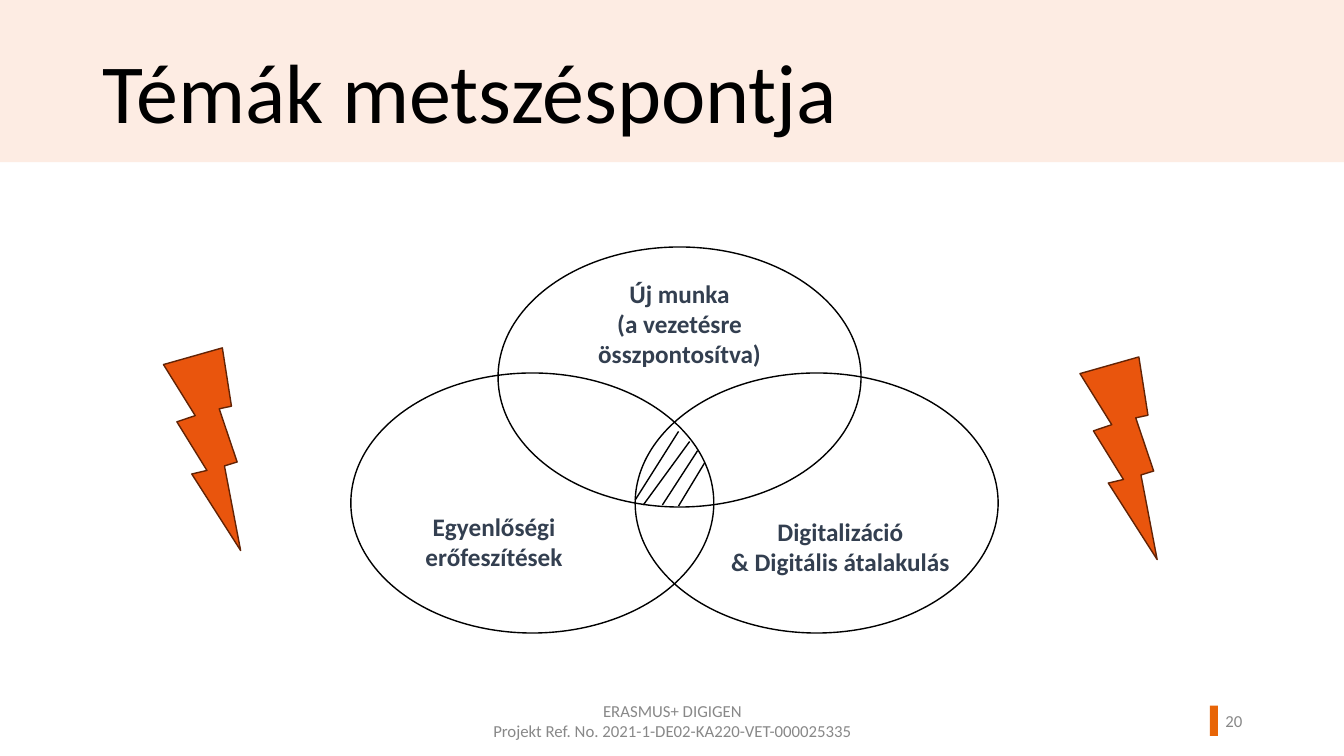
import pptx
import pptx.util
import pptx.dml.color
import pptx.enum.shapes
import pptx.enum.text
import pptx.oxml.ns
import lxml.etree

Inches = pptx.util.Inches
Pt = pptx.util.Pt
Shape = pptx.enum.shapes.MSO_SHAPE
Align = pptx.enum.text.PP_ALIGN
Anchor = pptx.enum.text.MSO_ANCHOR
COLORS = {name: pptx.dml.color.RGBColor.from_string(value) for name, value in {
    "band": "FDECE3", "accent": "E86507", "bolt": "E9550D", "bolt_edge": "622305",
    "black": "000000", "label": "333F50", "footer": "888888",
}.items()}

deck = pptx.Presentation()
deck.slide_width = Inches(13.33)
deck.slide_height = Inches(7.5)
page = deck.slides.add_slide(deck.slide_layouts[5])


def add_figure(kind, left, top, width, height, fill=None, line=None):
    shape = page.shapes.add_shape(kind, Inches(left), Inches(top), Inches(width), Inches(height))
    shape.shadow.inherit = False
    if fill:
        shape.fill.solid()
        shape.fill.fore_color.rgb = COLORS[fill]
    else:
        shape.fill.background()
    if line:
        shape.line.color.rgb = COLORS[line]
        shape.line.width = Pt(1)
    else:
        shape.line.fill.background()
    return shape


def write_text(box, text, size, color, align, anchor=Anchor.TOP, bold=False):
    frame = box.text_frame
    frame.word_wrap = True
    frame.auto_size = pptx.enum.text.MSO_AUTO_SIZE.NONE
    frame.vertical_anchor = anchor
    frame.text = text
    for para in frame.paragraphs:
        para.alignment = align
        for span in para.runs:
            span.font.name = "Calibri"
            span.font.size = Pt(size)
            span.font.bold = bold
            span.font.color.rgb = COLORS[color]


band = add_figure(Shape.RECTANGLE, 0, 0, 13.33, 1.61, fill="band")
page.shapes.element.insert(2, band.element)
add_figure(Shape.RECTANGLE, 12, 7, 0.08, 0.3, fill="accent")

title = page.shapes.title
title.left, title.top = Inches(0.92), Inches(0.46)
title.width, title.height = Inches(9.93), Inches(0.85)
write_text(title, "Témák metszéspontja", 60, "black", Align.LEFT)
title.text_frame.paragraphs[0].line_spacing = 0.9

for left, top in [(1.41, 3.45), (10.5, 3.54)]:
    bolt = add_figure(Shape.LIGHTNING_BOLT, left, top, 1.29, 1.86, "bolt", "bolt_edge")
    bolt.rotation = 17.7

for left, top in [(3.48, 3.7), (6.3, 3.7), (4.94, 2.45)]:
    add_figure(Shape.OVAL, left, top, 3.6, 2.58, line="black")

hatching = [
    (6.3, 4.96, 6.73, 4.28),
    (6.38, 5.01, 6.84, 4.38),
    (6.57, 5.01, 6.92, 4.47),
    (6.73, 5.02, 6.99, 4.59),
]
for ends in hatching:
    stroke = page.shapes.add_connector(
        pptx.enum.shapes.MSO_CONNECTOR.STRAIGHT, *[Inches(end) for end in ends])
    stroke.line.color.rgb = COLORS["black"]
    stroke.line.width = Pt(1)
    lxml.etree.SubElement(stroke.element.spPr, pptx.oxml.ns.qn("a:effectLst"))

label_style = (18, "label", Align.CENTER, Anchor.TOP, True)
footer_style = (12, "footer", Align.CENTER, Anchor.MIDDLE)
number_style = (12, "footer", Align.RIGHT, Anchor.MIDDLE)
texts = [
    (5.35, 2.71, 2.78, 0.71, "Új munka\n(a vezetésre összpontosítva)", label_style),
    (6.9, 5.07, 2.87, 0.71, "Digitalizáció\n& Digitális átalakulás", label_style),
    (3.89, 5.02, 2.02, 0.4, "Egyenlőségi erőfeszítések", label_style),
    (4.42, 6.95, 4.5, 0.4,
     "ERASMUS+ DIGIGEN\vProjekt Ref. No. 2021-1-DE02-KA220-VET-000025335", footer_style),
    (11.77, 6.95, 0.65, 0.4, "20", number_style),
]
for left, top, width, height, text, style in texts:
    box = page.shapes.add_textbox(Inches(left), Inches(top), Inches(width), Inches(height))
    write_text(box, text, *style)

deck.save("out.pptx")
